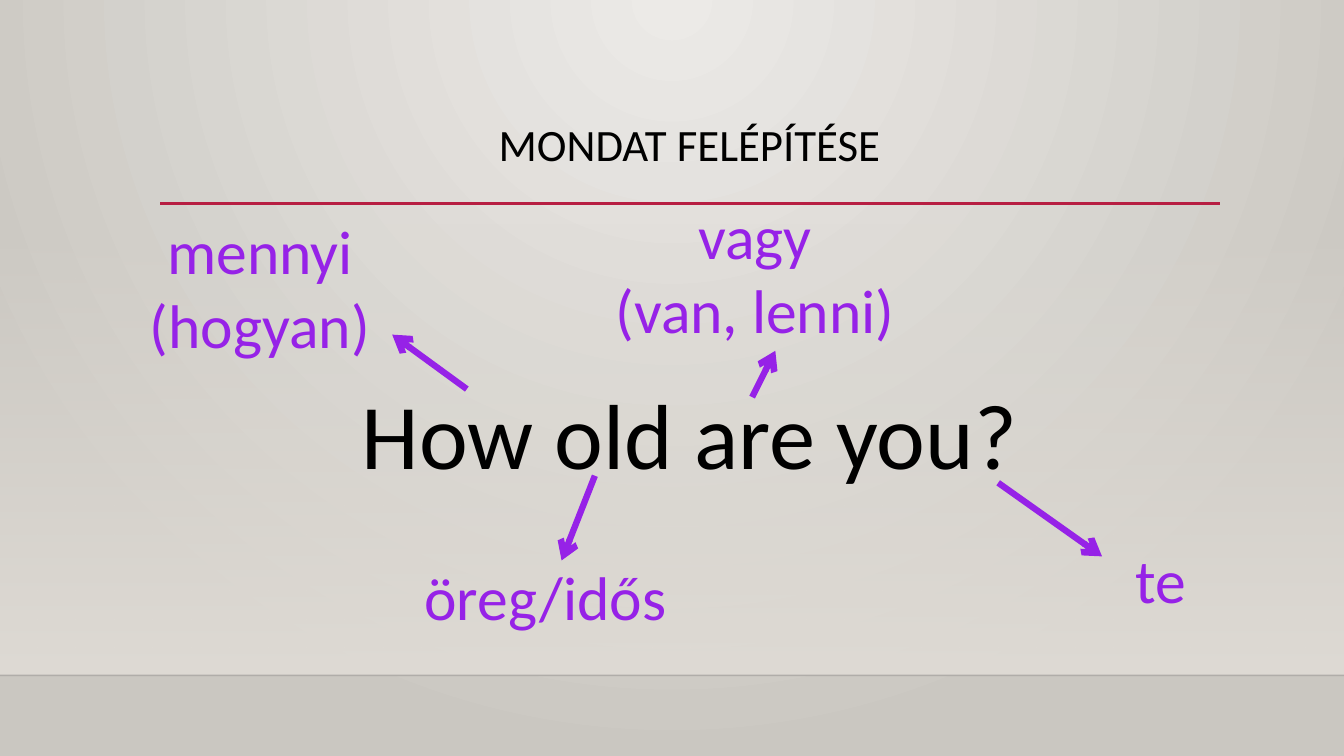
from lxml import etree
from pptx import Presentation
from pptx.dml.color import RGBColor
from pptx.enum.shapes import MSO_CONNECTOR, MSO_SHAPE
from pptx.enum.text import MSO_ANCHOR, PP_ALIGN
from pptx.oxml.ns import qn
from pptx.util import Emu, Pt

STRAIGHT = MSO_CONNECTOR.STRAIGHT
RECT = MSO_SHAPE.RECTANGLE
MIDDLE = MSO_ANCHOR.MIDDLE
CENTER = PP_ALIGN.CENTER

PX = 9144  # 100 px to the inch
WIDTH, HEIGHT = 1333, 750
FLOOR_Y = 670
FONT = "Calibri"
BLACK, PURPLE, RED = "000000", "9622E7", "B71E42"

# text, box (left, top, width, height)
TRANSLATIONS = [
    ("mennyi (hogyan)", (108, 206, 300, 158)),
    ("öreg/idős", (398, 549, 286, 84)),
    ("vagy\v(van, lenni)", (523, 191, 452, 158)),
    ("te", (1041, 532, 220, 84)),
]

# start x, y and end x, y
ARROWS = [
    (463, 386, 389, 332),
    (590, 472, 557, 556),
    (746, 394, 769, 348),
    (990, 479, 1093, 552),
]


def px(n):
    return Emu(n * PX)


def rgb(code):
    return RGBColor.from_string(code)


def sub(parent, tag, **attrs):
    return etree.SubElement(parent, qn(tag), attrs)


def set_alpha(parent, percent):
    for clr in parent.iter(qn("a:srgbClr")):
        sub(clr, "a:alpha", val=str(percent * 1000))


def add_gradient(fill, owner, start, end):
    """Give the fill two stops and return its element without a direction."""
    fill.gradient()
    for stop, color in zip(fill.gradient_stops, (start, end)):
        stop.color.rgb = rgb(color)
    grad = next(owner.iter(qn("a:gradFill")))
    grad.remove(grad.find(qn("a:lin")))
    first, last = grad.iter(qn("a:gs"))
    first.set("pos", "0")
    last.set("pos", "100000")
    return grad


def set_background(s):
    grad = add_gradient(s.background.fill, s.element, "ECEAE7", "CAC7C1")
    circle = sub(grad, "a:path", path="circle")
    sub(circle, "a:fillToRect", l="43000", t="0", r="43000", b="100000")


def add_wall(s, left, top, width, height):
    sp = s.shapes.add_shape(RECT, px(left), px(top), px(width), px(height))
    sp.shadow.inherit = False
    sp.line.fill.background()
    grad = add_gradient(sp.fill, sp._element, "DFDBD5", "DFDBD5")
    set_alpha(next(grad.iter(qn("a:gs"))), 0)
    sub(grad, "a:lin", ang="5400000", scaled="0")


def add_line(s, x1, y1, x2, y2, color, width, alpha=None, arrow=False):
    sp = s.shapes.add_connector(STRAIGHT, px(x1), px(y1), px(x2), px(y2))
    sp.line.color.rgb = rgb(color)
    sp.line.width = Pt(width)
    ln = sp._element.spPr.find(qn("a:ln"))
    if alpha is not None:
        set_alpha(ln, alpha)
    if arrow:
        sub(ln, "a:tailEnd", type="arrow")
    sub(sp._element.spPr, "a:effectLst")


def add_text(s, text, box, size, color, spacing=1.0):
    tf = s.shapes.add_textbox(*map(px, box)).text_frame
    tf.word_wrap = True
    tf.vertical_anchor = MIDDLE
    p = tf.paragraphs[0]
    p.text = text
    p.alignment = CENTER
    p.line_spacing = spacing
    for r in p.runs:
        r.font.name = FONT
        r.font.size = Pt(size)
        r.font.color.rgb = rgb(color)


def main():
    prs = Presentation()
    prs.slide_width, prs.slide_height = px(WIDTH), px(HEIGHT)
    s = prs.slides.add_slide(prs.slide_layouts[6])

    # Backdrop
    set_background(s)
    add_wall(s, 0, 221, WIDTH, FLOOR_Y - 221)
    add_line(s, 0, FLOOR_Y, WIDTH, FLOOR_Y, "000001", 1, alpha=20)

    # Title and sentence
    add_line(s, 159, 202, 1210, 202, RED, 2.5)
    add_text(s, "MONDAT FELÉPÍTÉSE", (159, 88, 1050, 115), 32, BLACK, spacing=0.9)
    add_text(s, "How old are you?", (159, 358, 1050, 131), 66, BLACK, spacing=1.1)

    # Word translations with arrows
    for text, box in TRANSLATIONS:
        add_text(s, text, box, 44, PURPLE)
    for ends in ARROWS:
        add_line(s, *ends, PURPLE, 4.5, arrow=True)

    prs.save("out.pptx")


if __name__ == "__main__":
    main()
